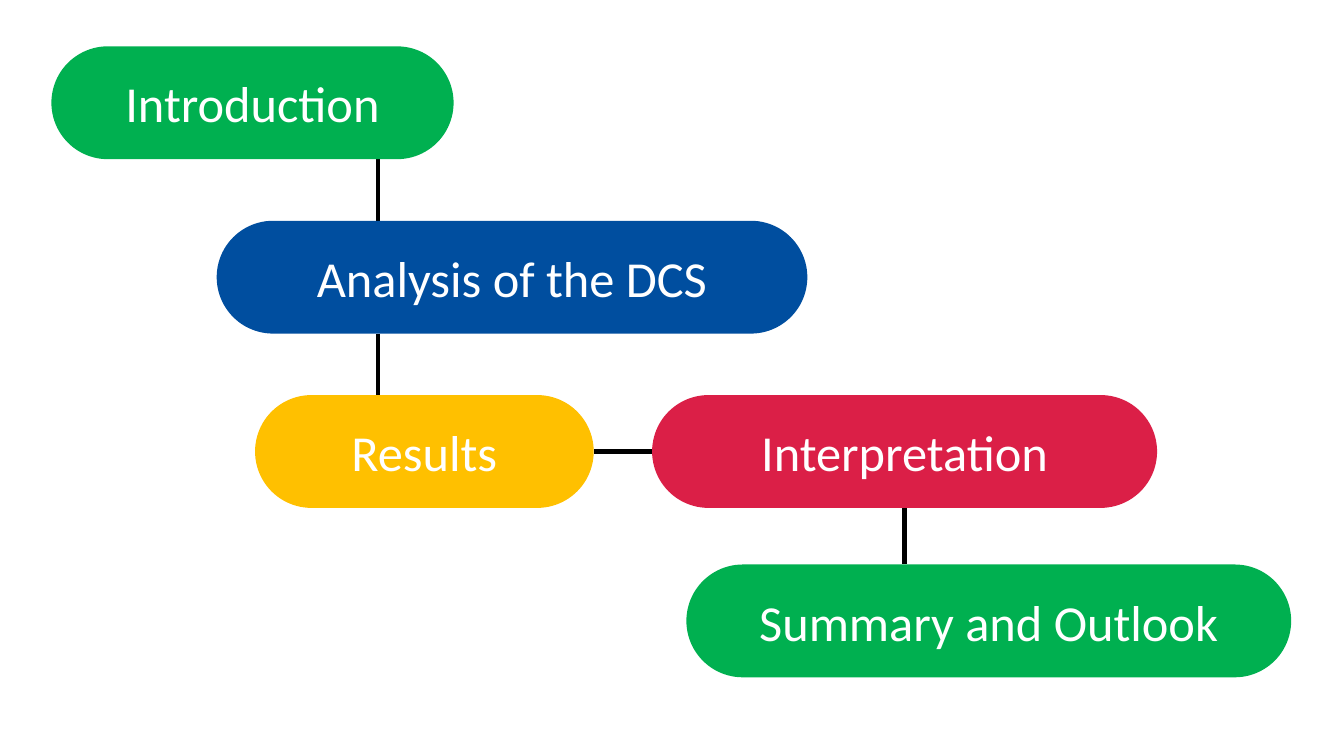
from lxml.etree import SubElement
from pptx import Presentation
from pptx.dml.color import RGBColor
from pptx.enum.shapes import MSO_CONNECTOR as CONN, MSO_SHAPE as SHAPE
from pptx.enum.text import MSO_ANCHOR as ANCHOR, PP_ALIGN as ALIGN
from pptx.oxml.ns import qn
from pptx.util import Pt

COLORS = {
    "green": "00B050",
    "blue": "004E9F",
    "yellow": "FFC000",
    "red": "DB1F47",
    "black": "000000",
    "white": "FFFFFF",
}
STEP_HEIGHT = 80.6
ROWS = [33.1, 157.7, 282.2, 403.2]
STEPS = [
    ("Introduction", 0, 36.7, 287.3, "green"),
    ("Analysis of the DCS", 1, 154.8, 421.9, "blue"),
    ("Results", 2, 182.2, 241.9, "yellow"),
    ("Interpretation", 2, 465.8, 360.7, "red"),
    ("Summary and Outlook", 3, 490.3, 432, "green"),
]
DROPS = [(270, 0), (270, 1), (645.8, 2)]


def rgb(name):
    return RGBColor.from_string(COLORS[name])


def write_text(tf, text, size=36, font="Calibri", color="white", align=ALIGN.CENTER):
    tf.word_wrap = True
    tf.vertical_anchor = ANCHOR.MIDDLE
    p = tf.paragraphs[0]
    p.alignment = align
    r = p.add_run()
    r.text = text
    r.font.size = Pt(size)
    r.font.name = font
    r.font.color.rgb = rgb(color)


def add_link(s, x1, y1, x2, y2):
    line = s.shapes.add_connector(CONN.STRAIGHT, Pt(x1), Pt(y1), Pt(x2), Pt(y2))
    line.line.color.rgb = rgb("black")
    line.line.width = Pt(3.5)
    SubElement(line._element.spPr, qn("a:effectLst"))


def add_step(s, text, row, left, width, color):
    sp = s.shapes.add_shape(
        SHAPE.ROUNDED_RECTANGLE, Pt(left), Pt(ROWS[row]), Pt(width), Pt(STEP_HEIGHT)
    )
    sp.adjustments[0] = 0.5
    sp.shadow.inherit = False
    sp.fill.solid()
    sp.fill.fore_color.rgb = rgb(color)
    sp.line.fill.background()
    write_text(sp.text_frame, text)


def main():
    prs = Presentation()
    prs.slide_width, prs.slide_height = Pt(960), Pt(540)
    s = prs.slides.add_slide(prs.slide_layouts[6])
    for x, row in DROPS:
        add_link(s, x, ROWS[row] + STEP_HEIGHT, x, ROWS[row + 1])
    results, interpretation = STEPS[2], STEPS[3]
    middle = ROWS[2] + STEP_HEIGHT / 2
    add_link(s, results[2] + results[3], middle, interpretation[2], middle)
    for step in STEPS:
        add_step(s, *step)
    prs.save("out.pptx")


if __name__ == "__main__":
    main()
